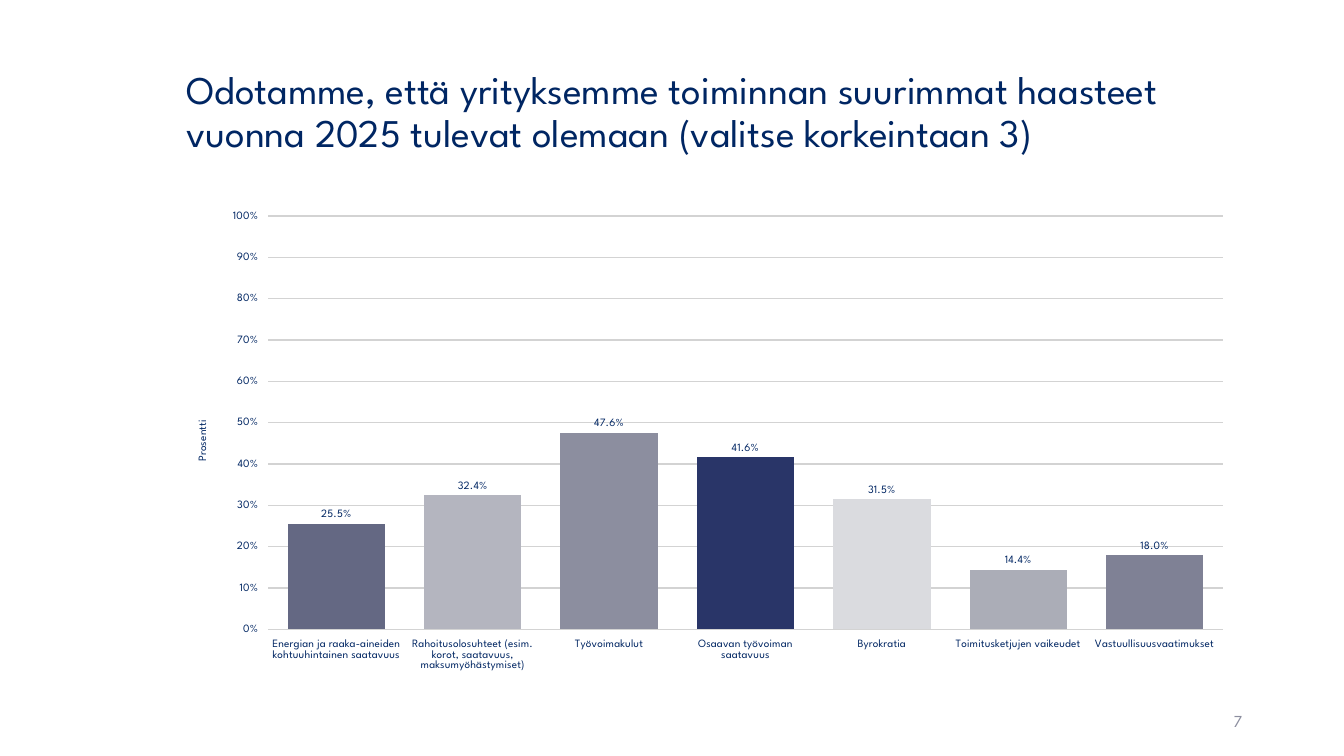
from lxml import etree
from pptx import Presentation
from pptx import util as u
from pptx.chart.data import CategoryChartData
from pptx.dml.color import RGBColor
from pptx.enum import chart as ch, text as tx
from pptx.oxml.ns import qn

NAVY = RGBColor(0x00, 0x26, 0x63)
GRAY = RGBColor(0x8C, 0x8E, 0x9F)
GRID = RGBColor(0xD3, 0xD3, 0xD3)

# Category, share, bar colour
BARS = [
    ("Energian ja raaka-aineiden kohtuuhintainen saatavuus", 0.255, RGBColor(0x64, 0x68, 0x83)),
    ("Rahoitusolosuhteet (esim. korot, saatavuus, maksumyöhästymiset)", 0.324,
     RGBColor(0xB4, 0xB5, 0xBF)),
    ("Työvoimakulut", 0.476, GRAY),
    ("Osaavan työvoiman saatavuus", 0.416, RGBColor(0x29, 0x35, 0x68)),
    ("Byrokratia", 0.315, RGBColor(0xDA, 0xDB, 0xDF)),
    ("Toimitusketjujen vaikeudet", 0.144, RGBColor(0xAB, 0xAD, 0xB7)),
    ("Vastuullisuusvaatimukset", 0.18, RGBColor(0x7F, 0x81, 0x95)),
]


class Deck:
    face = "League Spartan"

    def __init__(self):
        self.prs = Presentation()
        self.prs.slide_width = u.Inches(13.33)
        self.prs.slide_height = u.Inches(7.5)
        self.slide = self.prs.slides.add_slide(self.prs.slide_layouts[5])

    def style(self, font, size, color=NAVY):
        font.name = self.face
        font.size = u.Pt(size)
        font.color.rgb = color

    def fill_text(self, shape, words, size, color, align):
        frame = shape.text_frame
        frame.word_wrap = True
        frame.auto_size = tx.MSO_AUTO_SIZE.NONE
        frame.vertical_anchor = tx.MSO_ANCHOR.MIDDLE
        para = frame.paragraphs[0]
        para.text = words
        para.alignment = align
        self.style(para.font, size, color)
        return para

    def title(self, words, x, y, w, h):
        shape = self.slide.shapes.title
        shape.left, shape.top = u.Inches(x), u.Inches(y)
        shape.width, shape.height = u.Inches(w), u.Inches(h)
        para = self.fill_text(shape, words, 28, NAVY, tx.PP_ALIGN.LEFT)
        para.line_spacing = 0.9

    def number(self, words, x, y, w, h):
        box = self.slide.shapes.add_textbox(*map(u.Inches, (x, y, w, h)))
        para = self.fill_text(box, words, 12, GRAY, tx.PP_ALIGN.RIGHT)
        para.space_after = u.Pt(6)

    def columns(self, bars, label, x, y, w, h):
        data = CategoryChartData()
        data.categories = [name for name, _, _ in bars]
        data.add_series("Series 1", [share for _, share, _ in bars])
        chart = self.slide.shapes.add_chart(
            ch.XL_CHART_TYPE.COLUMN_CLUSTERED, *map(u.Inches, (x, y, w, h)), data).chart
        self.style(chart.font, 18)
        chart.has_legend = chart.has_title = False

        # Columns and their labels
        plot = chart.plots[0]
        plot.vary_by_categories = False
        plot.gap_width, plot.overlap = 40, -2
        for i, (_, _, color) in enumerate(bars):
            fill = plot.series[0].points[i].format.fill
            fill.solid()
            fill.fore_color.rgb = color
        plot.has_data_labels = True
        tags = plot.data_labels
        tags.show_value = True
        tags.number_format, tags.number_format_is_linked = "0.0%", False
        tags.position = ch.XL_LABEL_POSITION.OUTSIDE_END
        self.style(tags.font, 8)

        # Axes
        for axis in (chart.category_axis, chart.value_axis):
            self.style(axis.tick_labels.font, 8)
            axis.format.line.fill.background()
        scale = chart.value_axis
        scale.minimum_scale, scale.maximum_scale, scale.major_unit = 0, 1, 0.1
        scale.tick_labels.number_format = "0%"
        scale.tick_labels.number_format_is_linked = False
        scale.major_gridlines.format.line.color.rgb = GRID
        scale.major_gridlines.format.line.width = u.Pt(1)
        para = scale.axis_title.text_frame.paragraphs[0]
        para.text = label
        self.style(para.font, 8)
        para.font.bold = False
        self.place(chart, x=0.086, y=0.03, w=0.894, h=0.862)

    def place(self, chart, **share):
        """Fix the inner plot area as shares of the chart frame."""
        area = chart.plots[0]._element.getparent()
        for old in area.findall(qn("c:layout")):
            area.remove(old)
        layout = etree.Element(qn("c:layout"))
        area.insert(0, layout)
        manual = etree.SubElement(layout, qn("c:manualLayout"))
        rules = {"layoutTarget": "inner", "xMode": "edge", "yMode": "edge", **share}
        for key, value in rules.items():
            etree.SubElement(manual, qn("c:" + key)).set("val", str(value))


def main():
    deck = Deck()
    deck.title("Odotamme, että yrityksemme toiminnan suurimmat haasteet "
               "vuonna 2025 tulevat olemaan (valitse korkeintaan 3)", 1.75, 0.4, 10.59, 1.45)
    deck.number("7", 9.42, 6.95, 3, 0.4)
    deck.columns(BARS, "Prosentti", 1.75, 2, 10.59, 4.76)
    deck.prs.save("out.pptx")


if __name__ == "__main__":
    main()
